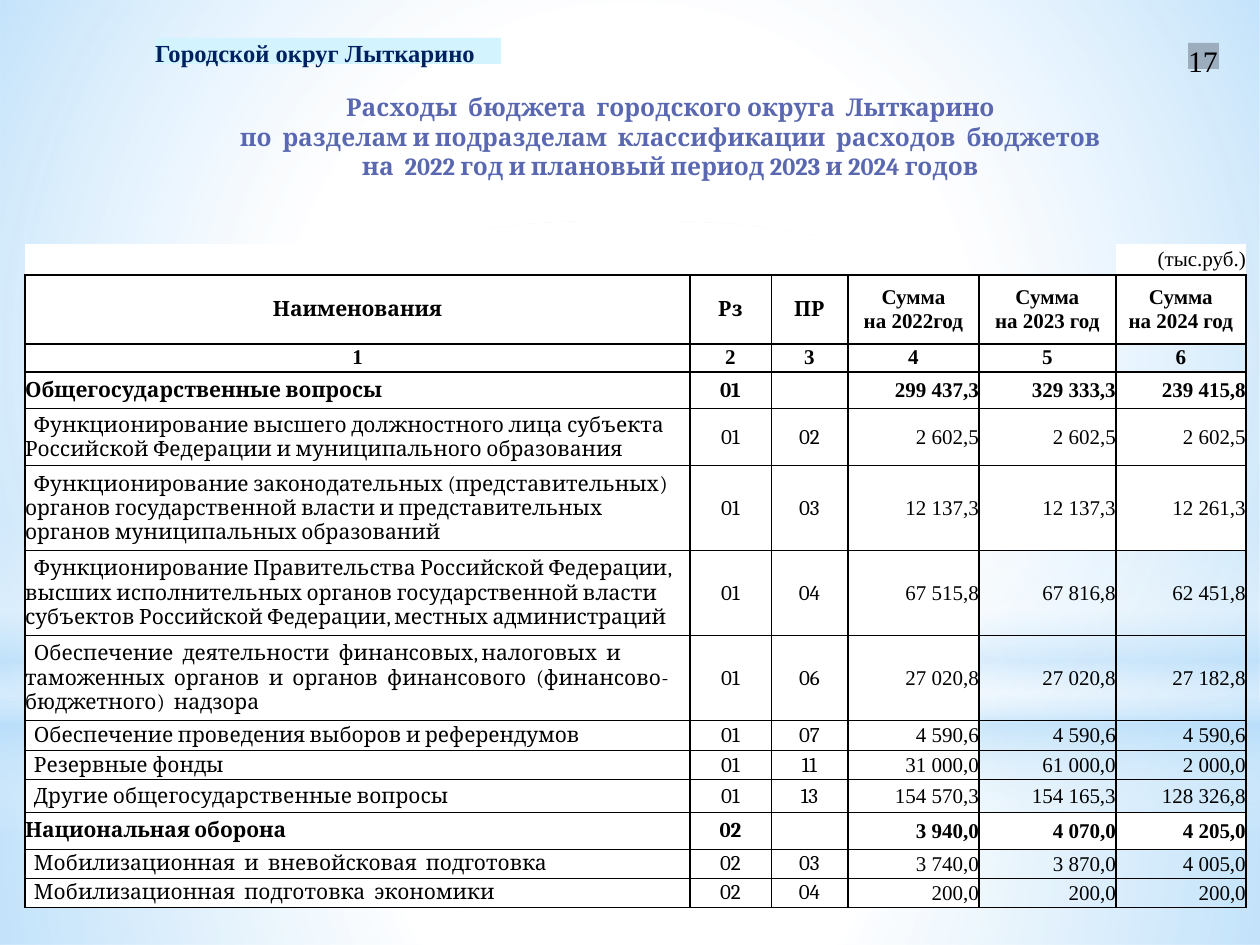
from dataclasses import dataclass

from lxml import etree
from pptx import Presentation
from pptx.dml.color import RGBColor
from pptx.enum.shapes import MSO_SHAPE
from pptx.enum.text import MSO_ANCHOR, PP_ALIGN
from pptx.oxml.ns import qn
from pptx.util import Emu, Pt

RECTANGLE, ELLIPSE = MSO_SHAPE.RECTANGLE, MSO_SHAPE.OVAL
LEFT, CENTER, RIGHT = PP_ALIGN.LEFT, PP_ALIGN.CENTER, PP_ALIGN.RIGHT
TOP, MIDDLE = MSO_ANCHOR.TOP, MSO_ANCHOR.MIDDLE
SCALE = 914400 / 126
SERIF, TIMES = "Cambria", "Times New Roman"
COLORS = {"white": "FFFFFF", "sky": "B4DCFA", "tag": "D3F4FF", "badge": "9CADBE",
          "navy": "002060", "black": "000000", "title": "5968B0"}
NO_INSETS = {"margin_left": 0, "margin_right": 0, "margin_top": 0, "margin_bottom": 0}
INDENT = 9
TABLE_LEFT, TABLE_TOP = 25, 244
COLUMN_WIDTHS = [665, 81, 77, 131, 137, 130]
ROW_HEIGHTS = [31, 69, 28, 37, 57, 85, 85, 85, 30, 29, 33, 37, 29, 29]
HEADER_ROWS = 3
CLEAR_CELLS = {(0, 3), (0, 4), (2, 3), (2, 5)} | {
    (row, column) for row in (6, 7, 8, 9, 10, 12, 13) for column in (4, 5)}


@dataclass
class Glow:
    box: tuple[int, int, int, int]
    stops: list[tuple[int, str, int]]
    preset: int = RECTANGLE
    radial: bool = True


@dataclass
class Label:
    box: tuple[int, int, int, int]
    text: str
    size: int
    color: str
    fill: str
    bold: bool


@dataclass
class Expense:
    name: str
    section: str
    subsection: str
    sums: tuple[str, str, str]


GLOWS = [
    Glow((0, 703, 1260, 242), [(0, "white", 91), (37, "white", 76), (100, "sky", 79)]),
    Glow((0, 0, 1260, 703), [(0, "white", 89), (48, "white", 62), (100, "sky", 79)]),
    Glow((0, 519, 1260, 315), [(0, "white", 0), (29, "white", 30), (45, "sky", 40),
                               (55, "white", 26), (65, "sky", 60), (100, "white", 0)],
         radial=False),
    Glow((0, 221, 1260, 703), [(0, "white", 100), (56, "white", 0)], ELLIPSE),
]
LABELS = [
    Label((155, 38, 346, 26), "Городской округ Лыткарино", 14, "navy", "tag", True),
    Label((1188, 43, 31, 26), "17", 17, "black", "badge", False),
]
TITLE = ("Расходы  бюджета  городского округа  Лыткарино\v"
         "по  разделам и подразделам  классификации  расходов  бюджетов\v"
         "на  2022 год и плановый период 2023 и 2024 годов")
HEADINGS = [
    ["", "", "", "", "", "(тыс.руб.)"],
    ["Наименования", "Рз", "ПР", "Сумма\vна 2022год", "Сумма\vна 2023 год",
     "Сумма\vна 2024 год"],
    ["1", "2", "3", "4", "5", "6"],
]
EXPENSES = [
    Expense("Общегосударственные вопросы", "01", "", ("299 437,3", "329 333,3", "239 415,8")),
    Expense("Функционирование высшего должностного лица субъекта Российской Федерации "
            "и муниципального образования", "01", "02", ("2 602,5", "2 602,5", "2 602,5")),
    Expense("Функционирование законодательных (представительных) органов государственной "
            "власти и представительных органов муниципальных образований",
            "01", "03", ("12 137,3", "12 137,3", "12 261,3")),
    Expense("Функционирование Правительства Российской Федерации, высших исполнительных "
            "органов государственной власти субъектов Российской Федерации, местных "
            "администраций", "01", "04", ("67 515,8", "67 816,8", "62 451,8")),
    Expense("Обеспечение  деятельности  финансовых, налоговых  и  таможенных  органов  и  "
            "органов  финансового  (финансово-бюджетного)  надзора",
            "01", "06", ("27 020,8", "27 020,8", "27 182,8")),
    Expense("Обеспечение проведения выборов и референдумов", "01", "07",
            ("4 590,6", "4 590,6", "4 590,6")),
    Expense("Резервные фонды", "01", "11", ("31 000,0", "61 000,0", "2 000,0")),
    Expense("Другие общегосударственные вопросы", "01", "13",
            ("154 570,3", "154 165,3", "128 326,8")),
    Expense("Национальная оборона", "02", "", ("3 940,0", "4 070,0", "4 205,0")),
    Expense("Мобилизационная  и  вневойсковая  подготовка", "02", "03",
            ("3 740,0", "3 870,0", "4 005,0")),
    Expense("Мобилизационная  подготовка  экономики", "02", "04",
            ("200,0", "200,0", "200,0")),
]


def px(length: int) -> Emu:
    return Emu(round(length * SCALE))


def rgb(color: str) -> RGBColor:
    return RGBColor.from_string(COLORS[color])


def add_node(parent, tag: str, **attributes):
    return etree.SubElement(parent, qn(tag), {key: str(value) for key, value in attributes.items()})


def apply(target, values: dict) -> None:
    for name, value in values.items():
        setattr(target, name, value)


def write(frame, text: str, size: int, font: str, color: str, bold: bool, align) -> None:
    para = frame.paragraphs[0]
    para.text = text
    para.alignment = align
    for span in para.runs:
        apply(span.font, {"size": Pt(size), "name": font, "bold": bold})
        span.font.color.rgb = rgb(color)
    if not text:
        add_node(para._p, "a:endParaRPr", sz=size * 100)


def add_plain_shape(page, preset, box: tuple[int, int, int, int]):
    shape = page.shapes.add_shape(preset, *map(px, box))
    shape.shadow.inherit = False
    shape.line.fill.background()
    return shape


def draw_glow(page, glow: Glow) -> None:
    shape = add_plain_shape(page, glow.preset, glow.box)
    shape.fill.gradient()
    gradient = shape._element.spPr.find(qn("a:gradFill"))
    for child in list(gradient):
        gradient.remove(child)
    stops = add_node(gradient, "a:gsLst")
    for position, color, alpha in glow.stops:
        stop = add_node(stops, "a:gs", pos=position * 1000)
        shade = add_node(stop, "a:srgbClr", val=COLORS[color])
        add_node(shade, "a:alpha", val=alpha * 1000)
    if glow.radial:
        radial = add_node(gradient, "a:path", path="circle")
        add_node(radial, "a:fillToRect", l=50000, t=50000, r=50000, b=50000)
    else:
        add_node(gradient, "a:lin", ang=5400000, scaled=0)


def draw_label(page, label: Label) -> None:
    shape = add_plain_shape(page, RECTANGLE, label.box)
    shape.fill.solid()
    shape.fill.fore_color.rgb = rgb(label.fill)
    apply(shape.text_frame, NO_INSETS | {"word_wrap": False, "vertical_anchor": TOP})
    write(shape.text_frame, label.text, label.size, TIMES, label.color, label.bold, LEFT)


def draw_title(page) -> None:
    box = page.shapes.add_textbox(*map(px, (123, 86, 1095, 102)))
    box.text_frame.word_wrap = True
    write(box.text_frame, TITLE, 14, SERIF, "title", True, CENTER)


def set_borders(cell, row: int, column: int) -> None:
    heavy_top, heavy_bottom = row <= HEADER_ROWS, row < HEADER_ROWS
    widths = {"a:lnL": 0.5 if column == 2 else 1, "a:lnR": 0.5 if column == 1 else 1,
              "a:lnT": 1 if heavy_top else 0.5, "a:lnB": 1 if heavy_bottom else 0.5}
    properties = cell._tc.get_or_add_tcPr()
    for side, width in widths.items():
        line = add_node(properties, side, w=Pt(width))
        if row == 0 and side != "a:lnB":
            add_node(line, "a:noFill")
        else:
            add_node(add_node(line, "a:solidFill"), "a:srgbClr", val=COLORS["black"])


def fill_cell(cell, row: int, column: int, text: str, bold: bool) -> None:
    apply(cell, NO_INSETS | {"vertical_anchor": MIDDLE})
    set_borders(cell, row, column)
    if (row, column) in CLEAR_CELLS:
        cell.fill.background()
    else:
        cell.fill.solid()
        cell.fill.fore_color.rgb = rgb("white")
    body = row >= HEADER_ROWS
    align = RIGHT if row == 0 or body and column > 2 else LEFT if body and column == 0 else CENTER
    font = TIMES if column > 2 or row == 2 else SERIF
    write(cell.text_frame, text, 12, font, "black", bold, align)
    if body and column == 0 and not bold:
        cell.text_frame.paragraphs[0]._p.get_or_add_pPr().set("indent", str(px(INDENT)))


def draw_table(page) -> None:
    size = (sum(COLUMN_WIDTHS), sum(ROW_HEIGHTS))
    table = page.shapes.add_table(len(ROW_HEIGHTS), len(COLUMN_WIDTHS),
                                  *map(px, (TABLE_LEFT, TABLE_TOP, *size))).table
    apply(table, {"first_row": False, "horz_banding": False})
    for column, width in zip(table.columns, COLUMN_WIDTHS):
        column.width = px(width)
    for line, height in zip(table.rows, ROW_HEIGHTS):
        line.height = px(height)
    rows = [(texts, index > 0) for index, texts in enumerate(HEADINGS)]
    rows += [([item.name, item.section, item.subsection, *item.sums], not item.subsection)
             for item in EXPENSES]
    for row, (texts, bold) in enumerate(rows):
        for column, text in enumerate(texts):
            fill_cell(table.cell(row, column), row, column, text, bold)


def main() -> None:
    deck = Presentation()
    apply(deck, {"slide_width": px(1260), "slide_height": px(945)})
    page = deck.slides.add_slide(deck.slide_layouts[6])
    for glow in GLOWS:
        draw_glow(page, glow)
    for label in LABELS:
        draw_label(page, label)
    draw_table(page)
    draw_title(page)
    deck.save("out.pptx")


if __name__ == "__main__":
    main()
